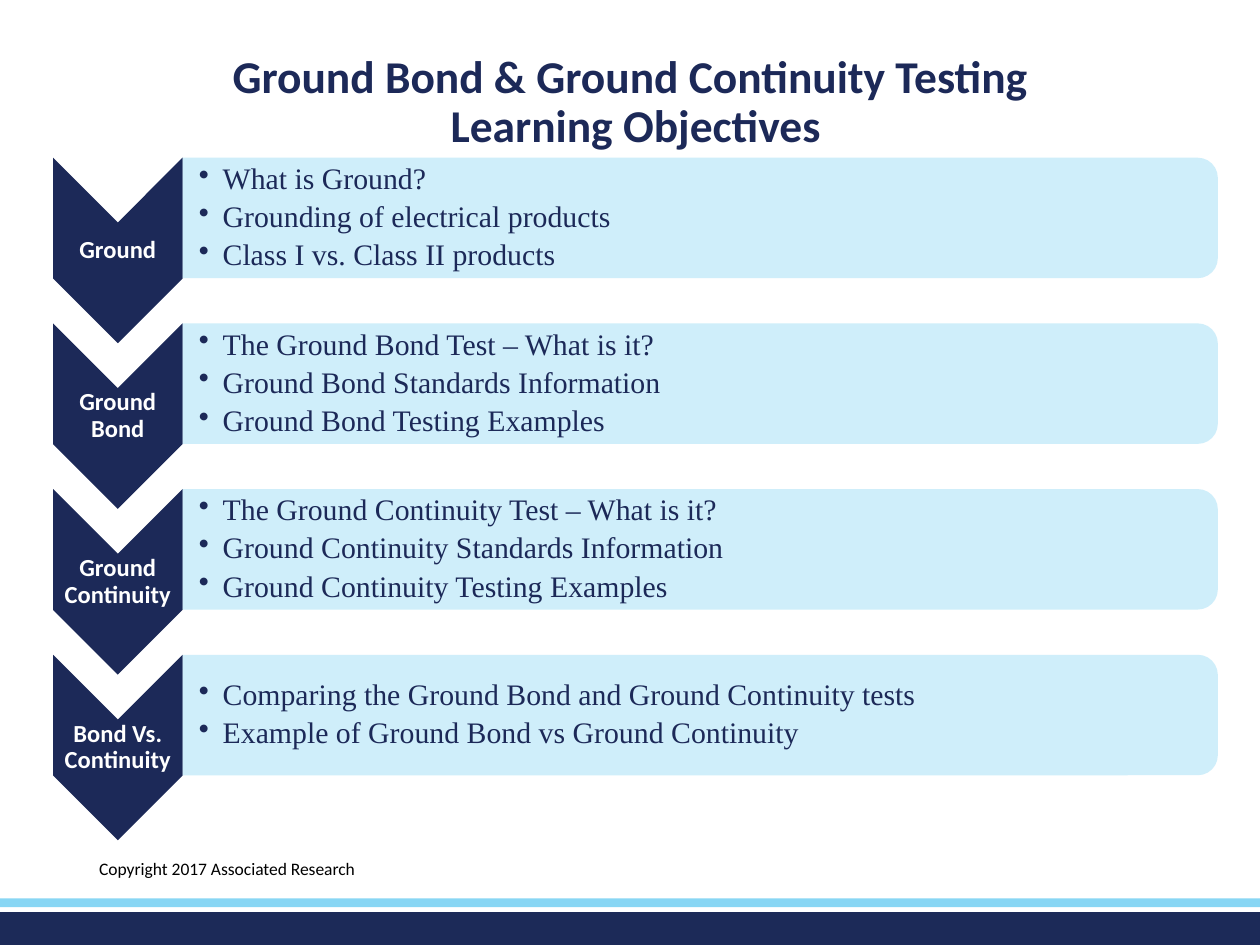
"""Build the ground bond and ground continuity learning objectives slide."""
from dataclasses import dataclass
from typing import Optional

from lxml import etree
from pptx import Presentation
from pptx import util as u
from pptx.dml.color import RGBColor
from pptx.enum import shapes, text
from pptx.oxml.ns import qn


@dataclass(frozen=True)
class Theme:
    navy: str = "1C2958"
    band_navy: str = "1C2A58"
    sky: str = "87D6F4"
    band_sky: str = "88D6F4"
    white: str = "FFFFFF"
    black: str = "000000"
    panel_opacity: int = 40
    heading_font: str = "Calibri"
    body_font: str = "Times New Roman"
    title_size: float = 26
    label_size: float = 14
    body_size: float = 17
    footer_size: float = 10


@dataclass(frozen=True)
class Box:
    left: float
    top: float
    width: float
    height: float

    def lengths(self) -> tuple:
        return tuple(u.Cm(v) for v in (self.left, self.top, self.width, self.height))

    def turned(self) -> "Box":
        shift = (self.width - self.height) / 2
        return Box(self.left + shift, self.top - shift, self.height, self.width)


@dataclass(frozen=True)
class Topic:
    label: str
    points: tuple


THEME = Theme()
TOPICS = (
    Topic("Ground", ("What is Ground?", "Grounding of electrical products",
                     "Class I vs. Class II products")),
    Topic("Ground Bond", ("The Ground Bond Test – What is it?",
                          "Ground Bond Standards Information",
                          "Ground Bond Testing Examples")),
    Topic("Ground Continuity", ("The Ground Continuity Test – What is it?",
                                "Ground Continuity Standards Information",
                                "Ground Continuity Testing Examples")),
    Topic("Bond Vs. Continuity", ("Comparing the Ground Bond and Ground Continuity tests",
                                  "Example of Ground Bond vs Ground Continuity")),
)
ROW_TOP, ROW_PITCH = 3.18, 3.34
ARROW_LEFT, ARROW_WIDTH, ARROW_HEIGHT = 1.07, 2.61, 3.74
PANEL_LEFT, PANEL_WIDTH, PANEL_HEIGHT = 3.68, 20.87, 2.43
INSET, BULLET_INDENT = 0.03, 0.48


def add_filled(slide, kind, box: Box, color: str, opacity: int = 100, turned: bool = False):
    """Add a borderless shape that fills the box, turned a quarter if asked."""
    placed = box.turned() if turned else box
    shape = slide.shapes.add_shape(kind, *placed.lengths())
    shape.rotation = 90 if turned else 0
    shape.shadow.inherit = False
    shape.line.fill.background()
    shape.fill.solid()
    shape.fill.fore_color.rgb = RGBColor.from_string(color)
    if opacity < 100:
        tone = shape.fill._xPr.find(qn("a:solidFill"))[0]
        etree.SubElement(tone, qn("a:alpha"), val=str(opacity * 1000))
    return shape


def write(frame, lines: tuple, *, size: float, color: str, font: str = THEME.heading_font,
          bold: bool = False, align=text.PP_ALIGN.LEFT, anchor=text.MSO_ANCHOR.TOP,
          insets: Optional[tuple] = None, spacing: float = 1.0, after: float = 0,
          bullets: bool = False) -> None:
    """Write one paragraph per line with the given format."""
    frame.word_wrap = True
    frame.auto_size = text.MSO_AUTO_SIZE.NONE
    frame.vertical_anchor = anchor
    if insets:
        (frame.margin_left, frame.margin_top,
         frame.margin_right, frame.margin_bottom) = map(u.Cm, insets)
    for index, line in enumerate(lines):
        paragraph = frame.paragraphs[0] if index == 0 else frame.add_paragraph()
        paragraph.text = line
        paragraph.alignment = align
        paragraph.line_spacing = spacing
        paragraph.space_before = u.Pt(0)
        paragraph.space_after = u.Pt(after)
        if bullets:
            properties = paragraph._p.get_or_add_pPr()
            properties.set("marL", str(u.Cm(BULLET_INDENT)))
            properties.set("indent", str(-u.Cm(BULLET_INDENT)))
            etree.SubElement(properties, qn("a:buChar"), char="•")
        for run in paragraph.runs:
            run.font.name = font
            run.font.size = u.Pt(size)
            run.font.bold = bold
            run.font.color.rgb = RGBColor.from_string(color)


def add_text(slide, box: Box, lines: tuple, **style) -> None:
    """Add a text box with formatted lines."""
    write(slide.shapes.add_textbox(*box.lengths()).text_frame, lines, **style)


def add_topic(slide, topic: Topic, top: float) -> None:
    """Draw one chevron with its label and its panel of points."""
    arrow = Box(ARROW_LEFT, top, ARROW_WIDTH, ARROW_HEIGHT)
    add_filled(slide, shapes.MSO_SHAPE.CHEVRON, arrow, THEME.navy, turned=True)
    notch = ARROW_WIDTH / 2
    add_text(slide, Box(ARROW_LEFT, top + notch, ARROW_WIDTH, ARROW_HEIGHT - 2 * notch),
             (topic.label,), size=THEME.label_size, color=THEME.white, bold=True,
             align=text.PP_ALIGN.CENTER, anchor=text.MSO_ANCHOR.MIDDLE,
             insets=(INSET,) * 4, spacing=0.9)
    panel = Box(PANEL_LEFT, top, PANEL_WIDTH, PANEL_HEIGHT)
    add_filled(slide, shapes.MSO_SHAPE.ROUND_2_SAME_RECTANGLE, panel, THEME.sky,
               THEME.panel_opacity, turned=True)
    add_text(slide, Box(PANEL_LEFT, top + 0.12, PANEL_WIDTH - 0.12, PANEL_HEIGHT - 0.24),
             topic.points, size=THEME.body_size, color=THEME.navy, font=THEME.body_font,
             anchor=text.MSO_ANCHOR.MIDDLE, insets=(0.33, INSET, INSET, INSET),
             spacing=0.9, after=3.4, bullets=True)


def main() -> None:
    """Build and save the slide."""
    presentation = Presentation()
    presentation.slide_width, presentation.slide_height = u.Cm(25.4), u.Cm(19.05)
    slide = presentation.slides.add_slide(presentation.slide_layouts[5])

    title = slide.shapes.title
    title.left, title.top, title.width, title.height = Box(1.07, 0.97, 23.5, 1.47).lengths()
    write(title.text_frame, ("Ground Bond & Ground Continuity Testing \vLearning Objectives",),
          size=THEME.title_size, color=THEME.navy, bold=True,
          align=text.PP_ALIGN.CENTER, spacing=0.9)

    for band, color in ((Box(0, 18.39, 25.4, 0.66), THEME.band_navy),
                        (Box(0, 18.11, 25.4, 0.18), THEME.band_sky)):
        add_filled(slide, shapes.MSO_SHAPE.RECTANGLE, band, color)
    add_text(slide, Box(1.75, 17.17, 6.73, 1.02), ("Copyright 2017 Associated Research",),
             size=THEME.footer_size, color=THEME.black)

    for row, topic in enumerate(TOPICS):
        add_topic(slide, topic, ROW_TOP + row * ROW_PITCH)
    presentation.save("out.pptx")


if __name__ == "__main__":
    main()
